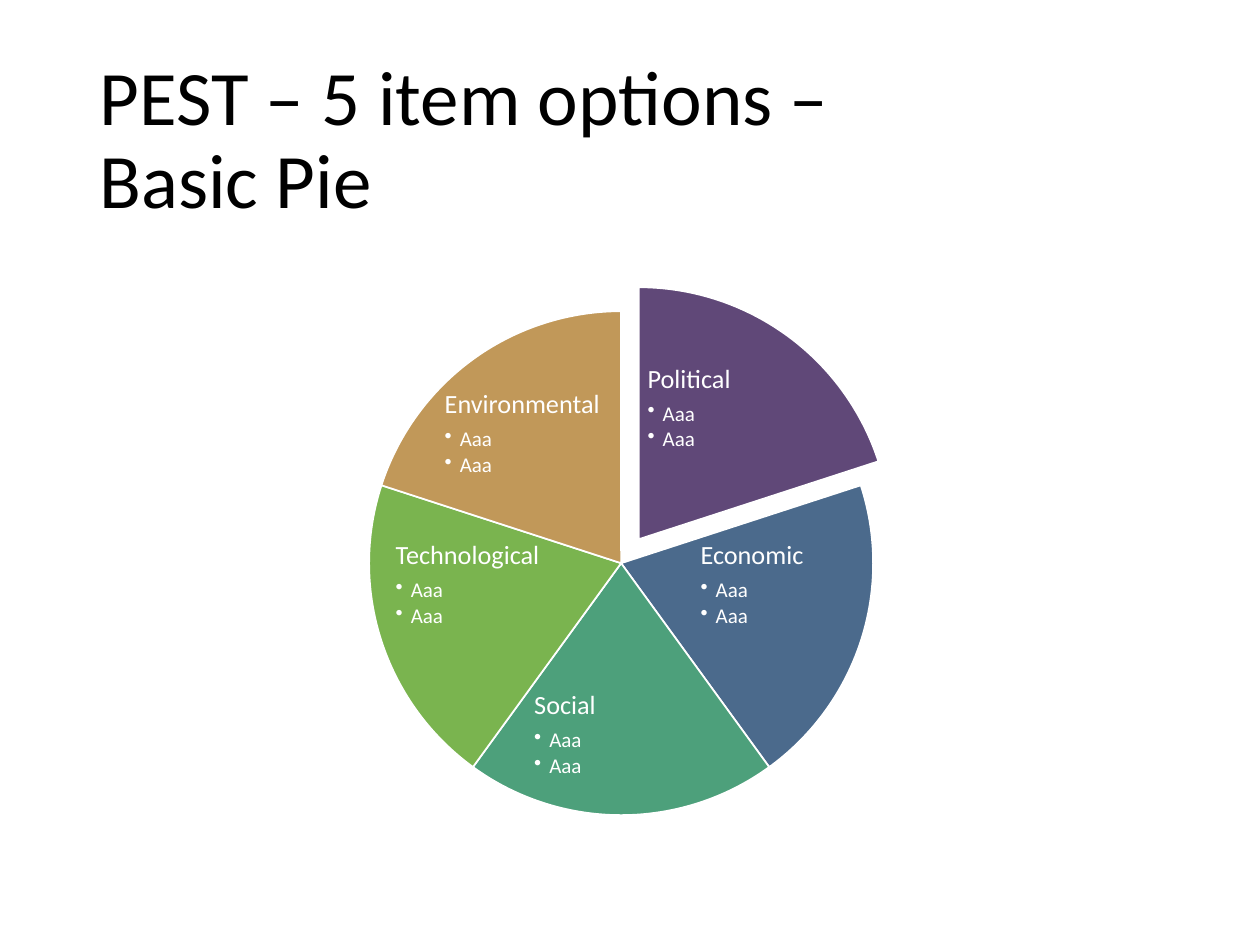
from lxml.etree import SubElement
from pptx import Presentation
from pptx.dml.color import RGBColor
from pptx.enum.shapes import MSO_SHAPE
from pptx.enum.text import MSO_ANCHOR, MSO_AUTO_SIZE, PP_ALIGN
from pptx.oxml.ns import qn
from pptx.util import Inches, Pt

COLORS = {
    "black": "000000",
    "white": "FFFFFF",
    "purple": "604878",
    "blue": "4B6A8C",
    "teal": "4DA07B",
    "green": "7AB44F",
    "tan": "C19859",
}
FONT = "Calibri"
PIE_SIZE = 4
PIE_POS = (2.93, 2.47)
PULLED_POS = (3.07, 2.28)
ANGLE_UNIT = 0.6
ITEMS = ["Aaa", "Aaa"]
SLICES = [
    ("Political", "purple", PULLED_POS, (5.12, 2.88, 1.36, 0.93)),
    ("Economic", "blue", PIE_POS, (5.54, 4.28, 1.19, 1)),
    ("Social", "teal", PIE_POS, (4.22, 5.47, 1.43, 0.86)),
    ("Technological", "green", PIE_POS, (3.12, 4.28, 1.19, 1)),
    ("Environmental", "tan", PIE_POS, (3.51, 3.08, 1.36, 0.93)),
]


def rgb(name):
    return RGBColor.from_string(COLORS[name])


def write(p, text, size, color="white", after=0, bullet=False):
    p.text = text
    p.alignment = PP_ALIGN.LEFT
    p.line_spacing = 0.9
    p.space_before = Pt(0)
    p.space_after = Pt(after)
    for r in p.runs:
        r.font.name = FONT
        r.font.size = Pt(size)
        r.font.color.rgb = rgb(color)
    if bullet:
        p.level = 1
        pPr = p._p.get_or_add_pPr()
        pPr.set("marL", str(Inches(0.12)))
        pPr.set("indent", str(-Inches(0.12)))
        SubElement(pPr, qn("a:buChar")).set("char", "•")


def add_title(s, text):
    sp = s.shapes.title
    sp.left, sp.top = Inches(0.69), Inches(0.4)
    sp.width, sp.height = Inches(8.62), Inches(1.45)
    tf = sp.text_frame
    tf.auto_size = MSO_AUTO_SIZE.NONE
    tf.vertical_anchor = MSO_ANCHOR.MIDDLE
    write(tf.paragraphs[0], text, 44, color="black")


def add_slice(shapes, pos, start, end, color):
    left, top = pos
    sp = shapes.add_shape(MSO_SHAPE.PIE, Inches(left), Inches(top),
                          Inches(PIE_SIZE), Inches(PIE_SIZE))
    sp.adjustments[0] = start * ANGLE_UNIT
    sp.adjustments[1] = end * ANGLE_UNIT
    sp.shadow.inherit = False
    sp.fill.solid()
    sp.fill.fore_color.rgb = rgb(color)
    sp.line.color.rgb = rgb("white")
    sp.line.width = Pt(1)


def add_label(shapes, box, heading, items):
    tf = shapes.add_textbox(*map(Inches, box)).text_frame
    tf.word_wrap = True
    tf.vertical_anchor = MSO_ANCHOR.TOP
    tf.margin_left = tf.margin_right = Inches(0.02)
    tf.margin_top = tf.margin_bottom = Inches(0.02)
    write(tf.paragraphs[0], heading, 15, after=5.25)
    for item in items:
        write(tf.add_paragraph(), item, 12, after=1.8, bullet=True)


def main():
    prs = Presentation()
    prs.slide_width, prs.slide_height = Inches(10), Inches(7.5)
    s = prs.slides.add_slide(prs.slide_layouts[5])
    add_title(s, "PEST – 5 item options – \vBasic Pie")
    shapes = s.shapes.add_group_shape().shapes
    sweep = 360 / len(SLICES)
    for i, (heading, color, pos, box) in enumerate(SLICES):
        start = (270 + i * sweep) % 360
        add_slice(shapes, pos, start, (start + sweep) % 360, color)
        add_label(shapes, box, heading, ITEMS)
    prs.save("out.pptx")


if __name__ == "__main__":
    main()
